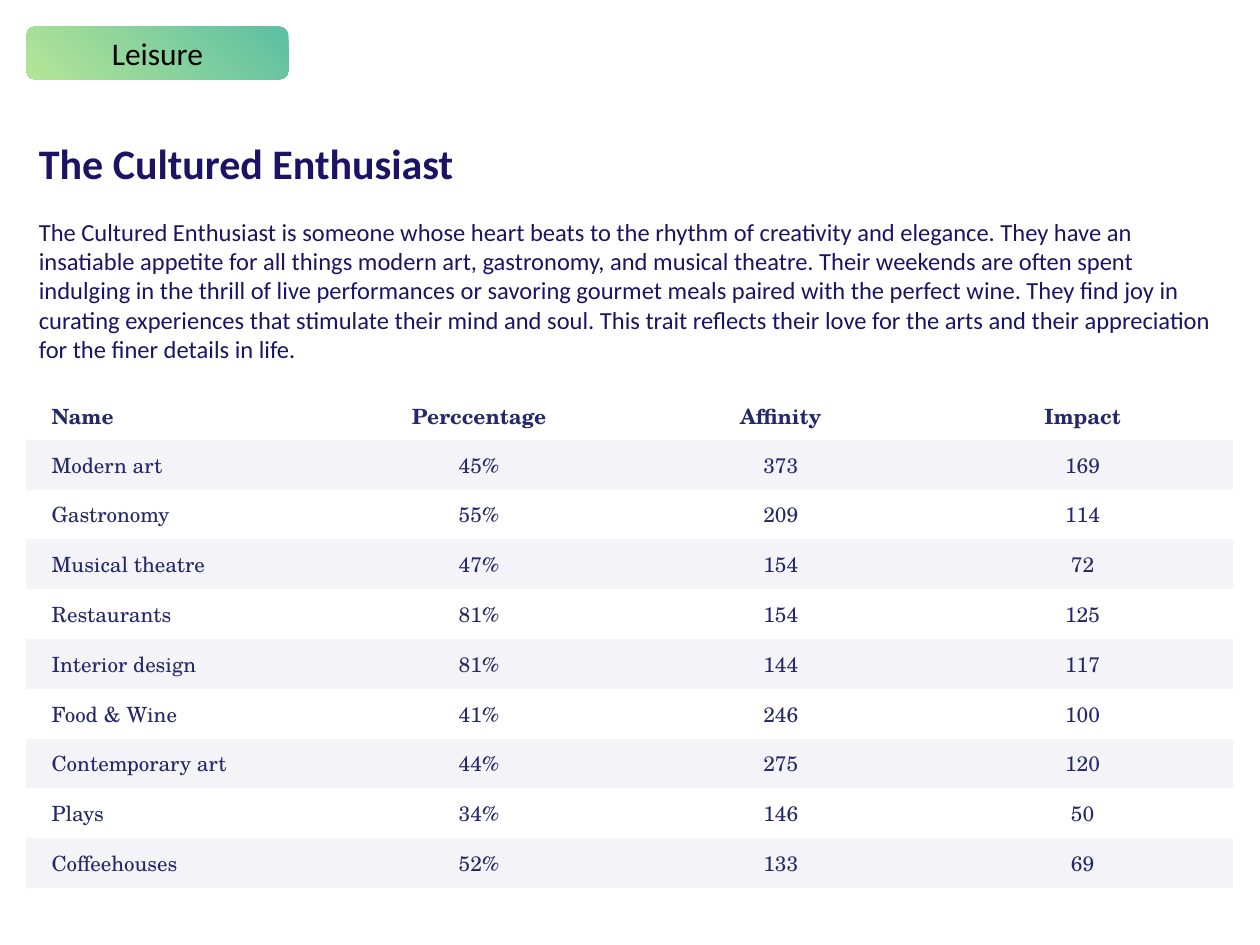
"""Build the Leisure slide: a tag, a persona description and an interest table."""
from pptx import Presentation
from pptx.dml.color import RGBColor
from pptx.enum.shapes import MSO_SHAPE
from pptx.enum.text import MSO_ANCHOR, MSO_AUTO_SIZE, PP_ALIGN
from pptx.oxml.ns import qn
from pptx.util import Inches, Pt

TAG = "Leisure"
TITLE = "The Cultured Enthusiast"
DESCRIPTION = (
    "The Cultured Enthusiast is someone whose heart beats to the rhythm of creativity and elegance. "
    "They have an insatiable appetite for all things modern art, gastronomy, and musical theatre. "
    "Their weekends are often spent indulging in the thrill of live performances or savoring gourmet "
    "meals paired with the perfect wine. They find joy in curating experiences that stimulate their "
    "mind and soul. This trait reflects their love for the arts and their appreciation for the finer "
    "details in life."
)
ROWS = [
    ("Name", "Perccentage", "Affinity", "Impact"),
    ("Modern art", "45%", "373", "169"),
    ("Gastronomy", "55%", "209", "114"),
    ("Musical theatre", "47%", "154", "72"),
    ("Restaurants", "81%", "154", "125"),
    ("Interior design", "81%", "144", "117"),
    ("Food & Wine", "41%", "246", "100"),
    ("Contemporary art", "44%", "275", "120"),
    ("Plays", "34%", "146", "50"),
    ("Coffeehouses", "52%", "133", "69"),
]
COLORS = {
    "black": "000000",
    "navy": "1B1464",
    "table_text": "252869",
    "band": "F4F4F8",
    "teal": "5CBFA4",
    "lime": "B5E596",
}
BODY_FONT = "Calibri"
TABLE_FONT = "TeX Gyre Schola"
PLAIN_TABLE_STYLE = "{2D5ABB26-0587-4C30-8999-92F81FD0307C}"
MARGIN, CONTENT_WIDTH = 0.21, 9.58
TABLE_TOP, TABLE_BOTTOM, HEADER_HEIGHT = 3.12, 7.05, 0.37


def color(name):
    return RGBColor.from_string(COLORS[name])


def write(frame, text, size, color_name, font=BODY_FONT, bold=False, align=PP_ALIGN.LEFT):
    paragraph = frame.paragraphs[0]
    paragraph.alignment = align
    span = paragraph.add_run()
    span.text = text
    span.font.name = font
    span.font.size = Pt(size)
    span.font.bold = bold
    span.font.color.rgb = color(color_name)
    return paragraph


def add_tag(page):
    tag = page.shapes.add_shape(
        MSO_SHAPE.ROUNDED_RECTANGLE, Inches(MARGIN), Inches(0.21), Inches(2.08), Inches(0.42))
    tag.shadow.inherit = False
    tag.line.fill.background()
    tag.fill.gradient()
    tag.fill.gradient_angle = 225
    for stop, name in zip(tag.fill.gradient_stops, ("teal", "lime")):
        stop.color.rgb = color(name)
    tag.text_frame.vertical_anchor = MSO_ANCHOR.MIDDLE
    write(tag.text_frame, TAG, 18, "black", align=PP_ALIGN.CENTER)


def add_text(page, text, top, height, size, bold=False):
    box = page.shapes.add_textbox(
        Inches(MARGIN), Inches(top), Inches(CONTENT_WIDTH), Inches(height))
    box.text_frame.word_wrap = True
    box.text_frame.auto_size = MSO_AUTO_SIZE.SHAPE_TO_FIT_TEXT
    write(box.text_frame, text, size, "navy", bold=bold)


def fill_cell(cell, text, row, column):
    is_name = column == 0
    cell.vertical_anchor = MSO_ANCHOR.MIDDLE
    cell.margin_left = Inches(0.1 if is_name else 0)
    cell.margin_right = cell.margin_top = cell.margin_bottom = 0
    if row % 2:
        cell.fill.solid()
        cell.fill.fore_color.rgb = color("band")
    else:
        cell.fill.background()
    paragraph = write(cell.text_frame, text, 12, "table_text", TABLE_FONT, row == 0,
                      PP_ALIGN.LEFT if is_name else PP_ALIGN.CENTER)
    if is_name:
        properties = paragraph._p.get_or_add_pPr()
        properties.set("marL", str(Inches(0.1)))
        properties.set("indent", "0")


def add_interests(page):
    frame = page.shapes.add_table(
        len(ROWS), len(ROWS[0]), Inches(MARGIN), Inches(TABLE_TOP),
        Inches(CONTENT_WIDTH), Inches(TABLE_BOTTOM - TABLE_TOP))
    table = frame.table
    table.first_row = table.horz_banding = False
    next(frame._element.iter(qn("a:tableStyleId"))).text = PLAIN_TABLE_STYLE
    body_height = (TABLE_BOTTOM - TABLE_TOP - HEADER_HEIGHT) / (len(ROWS) - 1)
    for row, values in enumerate(ROWS):
        table.rows[row].height = Inches(body_height if row else HEADER_HEIGHT)
        for column, text in enumerate(values):
            fill_cell(table.cell(row, column), text, row, column)


def main():
    deck = Presentation()
    deck.slide_width, deck.slide_height = Inches(10), Inches(7.5)
    page = deck.slides.add_slide(deck.slide_layouts[6])
    add_tag(page)
    add_text(page, TITLE, 1.04, 0.52, 24, bold=True)
    add_text(page, DESCRIPTION, 1.67, 1.04, 14)
    add_interests(page)
    deck.save("out.pptx")


if __name__ == "__main__":
    main()
